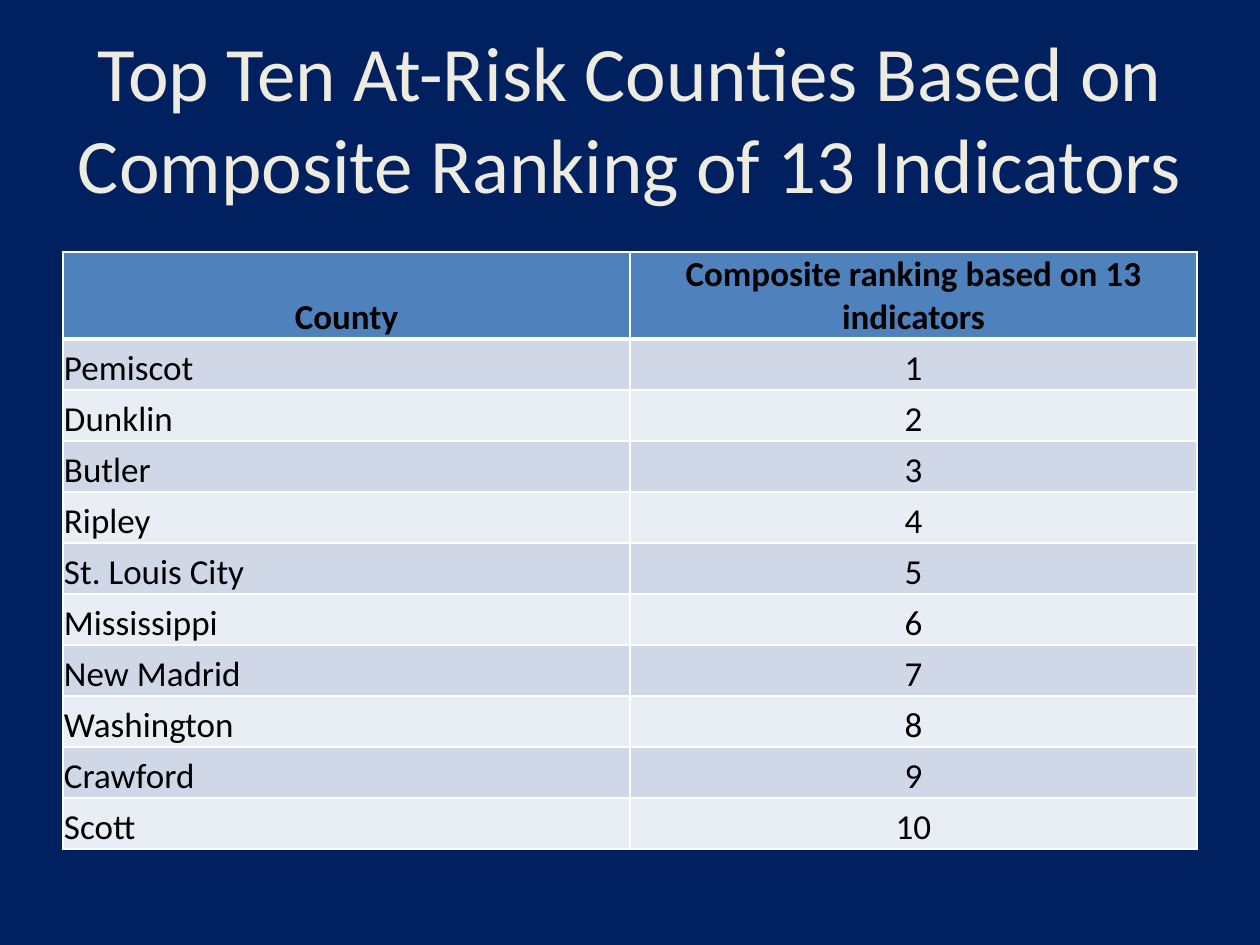
from dataclasses import dataclass

from lxml.etree import SubElement
from pptx import Presentation
from pptx.dml.color import RGBColor
from pptx.enum.text import MSO_ANCHOR, MSO_AUTO_SIZE, PP_ALIGN
from pptx.oxml.ns import qn
from pptx.util import Emu, Pt

EMU_PER_PX = 914400 / 126


def px(length):
    return Emu(round(length * EMU_PER_PX))


@dataclass(frozen=True)
class Theme:
    font: str = "Calibri"
    background: str = "002060"
    title_color: str = "EEECE1"
    text_color: str = "000000"
    header_fill: str = "4F81BD"
    band_fills: tuple = ("D0D8E8", "E9EDF4")
    border: str = "FFFFFF"
    title_size: int = 44
    table_size: int = 20
    thin_line: int = 1
    header_line: int = 3


class SlideBuilder:
    def __init__(self, slide, theme):
        self.slide = slide
        self.theme = theme
        fill = slide.background.fill
        fill.solid()
        fill.fore_color.rgb = RGBColor.from_string(theme.background)

    def add_text(self, paragraph, text, size, color, align, bold=False):
        paragraph.alignment = align
        run = paragraph.add_run()
        run.text = text
        run.font.name = self.theme.font
        run.font.size = Pt(size)
        run.font.bold = bold
        run.font.color.rgb = RGBColor.from_string(color)

    def title(self, text, left, top, width, height):
        heading = self.slide.shapes.title
        heading.left, heading.top = px(left), px(top)
        heading.width, heading.height = px(width), px(height)
        frame = heading.text_frame
        frame.word_wrap = True
        frame.auto_size = MSO_AUTO_SIZE.NONE
        frame.vertical_anchor = MSO_ANCHOR.MIDDLE
        self.add_text(frame.paragraphs[0], text, self.theme.title_size,
                      self.theme.title_color, PP_ALIGN.CENTER)

    def cell_borders(self, cell, top, bottom):
        thin = self.theme.thin_line
        properties = cell._tc.get_or_add_tcPr()
        sides = (("L", thin), ("R", thin), ("T", top), ("B", bottom))
        for position, (side, weight) in enumerate(sides):
            line = SubElement(properties, qn(f"a:ln{side}"), w=str(Pt(weight)))
            solid = SubElement(line, qn("a:solidFill"))
            SubElement(solid, qn("a:srgbClr"), val=self.theme.border)
            properties.insert(position, line)

    def cell(self, cell, text, fill, align, is_header, top, bottom):
        cell.fill.solid()
        cell.fill.fore_color.rgb = RGBColor.from_string(fill)
        cell.vertical_anchor = MSO_ANCHOR.BOTTOM
        cell.margin_left = cell.margin_right = cell.margin_top = px(1)
        cell.margin_bottom = 0
        self.add_text(cell.text_frame.paragraphs[0], text, self.theme.table_size,
                      self.theme.text_color, align, bold=is_header)
        self.cell_borders(cell, top, bottom)

    def table(self, rows, left, top, width, header_height, row_height):
        theme = self.theme
        height = header_height + row_height * (len(rows) - 1)
        table = self.slide.shapes.add_table(
            len(rows), len(rows[0]), px(left), px(top), px(width), px(height)).table
        table.horz_banding = False
        for column in table.columns:
            column.width = px(width // len(rows[0]))
        for r, values in enumerate(rows):
            is_header = r == 0
            table.rows[r].height = px(header_height if is_header else row_height)
            fill = theme.header_fill if is_header else theme.band_fills[(r - 1) % 2]
            # The heavy rule is shared by the header and the first county row
            top_line = theme.header_line if r == 1 else theme.thin_line
            bottom_line = theme.header_line if is_header else theme.thin_line
            for c, value in enumerate(values):
                align = PP_ALIGN.CENTER if is_header or c else PP_ALIGN.LEFT
                self.cell(table.cell(r, c), value, fill, align, is_header,
                          top_line, bottom_line)


COUNTIES = ("Pemiscot", "Dunklin", "Butler", "Ripley", "St. Louis City",
            "Mississippi", "New Madrid", "Washington", "Crawford", "Scott")


def main():
    presentation = Presentation()
    presentation.slide_width, presentation.slide_height = px(1260), px(945)
    title_only = presentation.slide_layouts[5]
    builder = SlideBuilder(presentation.slides.add_slide(title_only), Theme())

    # Title
    builder.title("Top Ten At-Risk Counties Based on Composite Ranking of 13 Indicators",
                  63, 38, 1134, 158)

    # County ranking
    header = ("County", "Composite ranking based on 13 indicators")
    ranking = [(county, str(rank)) for rank, county in enumerate(COUNTIES, 1)]
    builder.table([header, *ranking], 63, 252, 1134, header_height=87, row_height=51)

    presentation.save("out.pptx")


if __name__ == "__main__":
    main()
